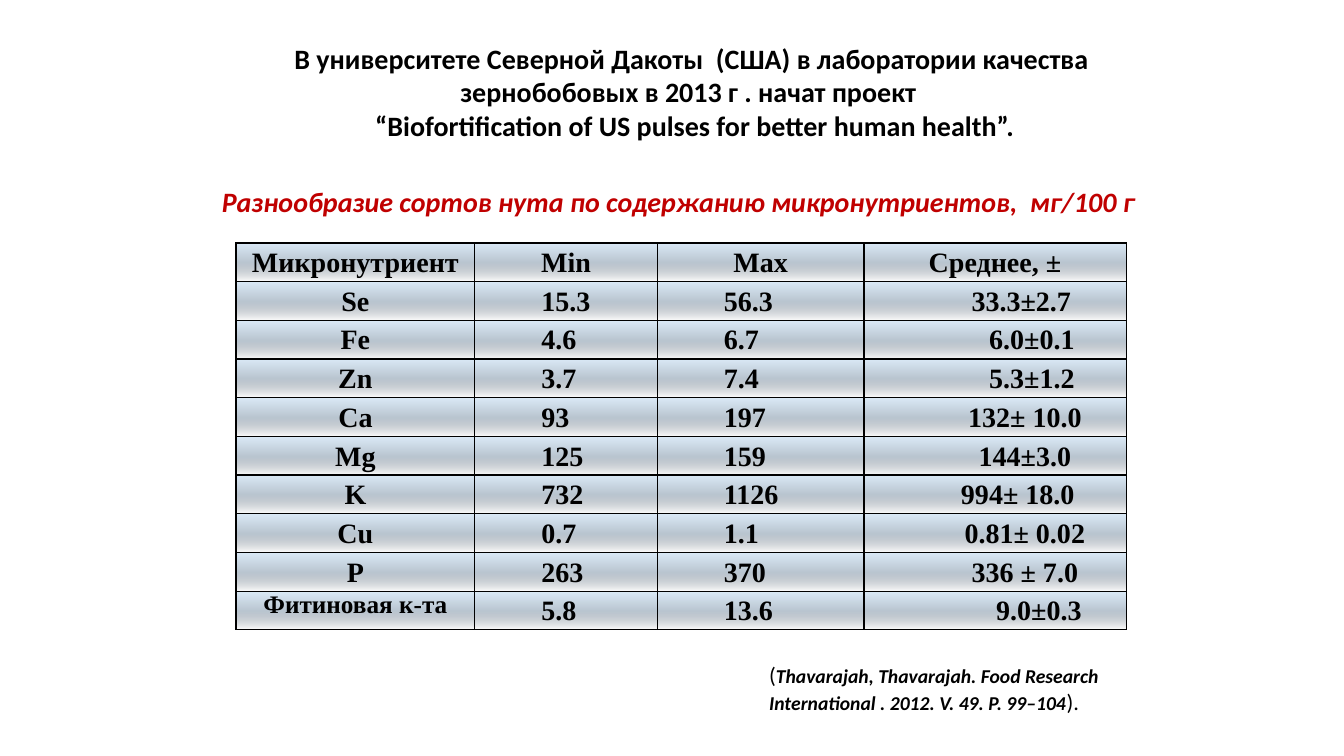
from lxml import etree
from pptx import Presentation
from pptx.dml.color import RGBColor
from pptx.enum.text import MSO_ANCHOR, MSO_AUTO_SIZE, PP_ALIGN
from pptx.oxml import parse_xml
from pptx.util import Inches, Pt

LEFT, MID = PP_ALIGN.LEFT, PP_ALIGN.CENTER
CENTER = MSO_ANCHOR.MIDDLE
GROW, FIXED = MSO_AUTO_SIZE.SHAPE_TO_FIT_TEXT, MSO_AUTO_SIZE.NONE
SPACE = "http://schemas.openxmlformats.org/drawingml/2006/main"

STOPS = [(0, "838B93", 0), (50, "BAC6D1", 100), (100, "DCEBF8", 100)]
WIDTHS = [2.37, 1.81, 2.05, 2.6]
HEAD = ["Микронутриент", "Min", "Max", "Среднее, ±"]
ROWS = [
    ("Se", "15.3", "56.3", "33.3±2.7", 0.52),
    ("Fe", "4.6", "6.7", "6.0±0.1", 0.73),
    ("Zn", "3.7", "7.4", "5.3±1.2", 0.73),
    ("Ca", "93", "197", "132± 10.0", 0.59),
    ("Mg", "125", "159", "144±3.0", 0.59),
    ("K", "732", "1126", "994± 18.0", 0.45),
    ("Cu", "0.7", "1.1", "0.81± 0.02", 0.59),
    ("P", "263", "370", "336 ± 7.0", 0.59),
    ("Фитиновая к-та", "5.8", "13.6", "9.0±0.3", 0.87),
]


def color(code):
    return RGBColor.from_string(code)


class Deck:
    sans, serif = "Calibri", "Times New Roman"
    black, red = "000000", "C00000"

    def __init__(self):
        self.file = Presentation()
        self.file.slide_width = Inches(13.33)
        self.file.slide_height = Inches(7.5)
        self.slide = self.file.slides.add_slide(self.file.slide_layouts[5])

    def style(self, font, size, bold=True, italic=False, face=None, code=None):
        font.name = face or self.sans
        font.size = Pt(size)
        font.bold, font.italic = bold, italic
        font.color.rgb = color(code or self.black)

    def title(self, text, box):
        shape = self.slide.shapes.title
        shape.left, shape.top, shape.width, shape.height = map(Inches, box)
        frame = shape.text_frame
        frame.text = text
        frame.word_wrap = True
        frame.auto_size = FIXED
        frame.vertical_anchor = CENTER
        para = frame.paragraphs[0]
        para.alignment = LEFT
        para.line_spacing = 0.9
        self.style(para.font, 20, italic=True, code=self.red)

    def frame(self, box):
        frame = self.slide.shapes.add_textbox(*map(Inches, box)).text_frame
        frame.word_wrap = True
        frame.auto_size = GROW
        return frame

    def intro(self, lines, box):
        frame = self.frame(box)
        frame.text = "\n".join(lines)
        for para in frame.paragraphs:
            para.alignment = MID
            self.style(para.font, 20)

    def cite(self, parts, box):
        para = self.frame(box).paragraphs[0]
        for text, size, strong in parts:
            run = para.add_run()
            run.text = text
            self.style(run.font, size, strong, strong)

    def paint(self, cell):
        props = cell._tc.get_or_add_tcPr()
        for side in "LRTB":
            props.append(parse_xml(
                f'<a:ln{side} xmlns:a="{SPACE}" w="12700"><a:solidFill>'
                f'<a:srgbClr val="{self.black}"/></a:solidFill></a:ln{side}>'))
        fill = etree.SubElement(props, f"{{{SPACE}}}gradFill", rotWithShape="1")
        stops = etree.SubElement(fill, f"{{{SPACE}}}gsLst")
        for place, code, alpha in STOPS:
            stop = etree.SubElement(stops, f"{{{SPACE}}}gs", pos=str(place * 1000))
            tint = etree.SubElement(stop, f"{{{SPACE}}}srgbClr", val=code)
            if alpha < 100:
                etree.SubElement(tint, f"{{{SPACE}}}alpha", val=str(alpha * 1000))
        etree.SubElement(fill, f"{{{SPACE}}}lin", ang=str(270 * 60000), scaled="0")

    def cell(self, cell, text, align, indent=0, size=20, space=1.15):
        cell.margin_left = cell.margin_right = Inches(0.07)
        cell.margin_top = cell.margin_bottom = 0
        cell.text = text
        para = cell.text_frame.paragraphs[0]
        para.alignment = align
        para.line_spacing = space
        if indent:
            props = para._p.get_or_add_pPr()
            props.set("marL", str(Inches(indent)))
            props.set("indent", "0")
        self.style(para.font, size, face=self.serif)
        self.paint(cell)

    def table(self, box):
        count = len(ROWS) + 1
        table = self.slide.shapes.add_table(
            count, len(HEAD), *map(Inches, box)).table
        table.horz_banding = False
        for col, width in zip(table.columns, WIDTHS):
            col.width = Inches(width)
        for row in table.rows:
            row.height = Inches(box[3] / count)
        for col, text in enumerate(HEAD):
            self.cell(table.cell(0, col), text, MID)
        for row, (name, low, high, mean, shift) in enumerate(ROWS, 1):
            last = row == len(ROWS)
            self.cell(table.cell(row, 0), name, MID,
                      size=18 if last else 20, space=1.0 if last else 1.15)
            self.cell(table.cell(row, 1), low, LEFT, 0.59)
            self.cell(table.cell(row, 2), high, LEFT, 0.59)
            self.cell(table.cell(row, 3), mean, MID, shift)


def main():
    deck = Deck()
    deck.intro([
        "В университете Северной Дакоты  (США) в лаборатории качества "
        "зернобобовых в 2013 г . начат проект ",
        " “Biofortification of US pulses for better human health”.",
    ], (2.41, 0.36, 8.9, 1.11))
    deck.title("Разнообразие сортов нута по содержанию микронутриентов,  мг/100 г",
               (2.1, 1.7, 9.29, 0.63))
    deck.table((2.34, 2.41, 8.83, 3.83))
    deck.cite([
        ("(", 16, False),
        ("Thavarajah, Thavarajah. Food Research International . "
         "2012. V. 49. P. 99–104", 14, True),
        (").", 16, False),
    ], (7.53, 6.51, 3.86, 0.64))
    deck.file.save("out.pptx")


if __name__ == "__main__":
    main()
